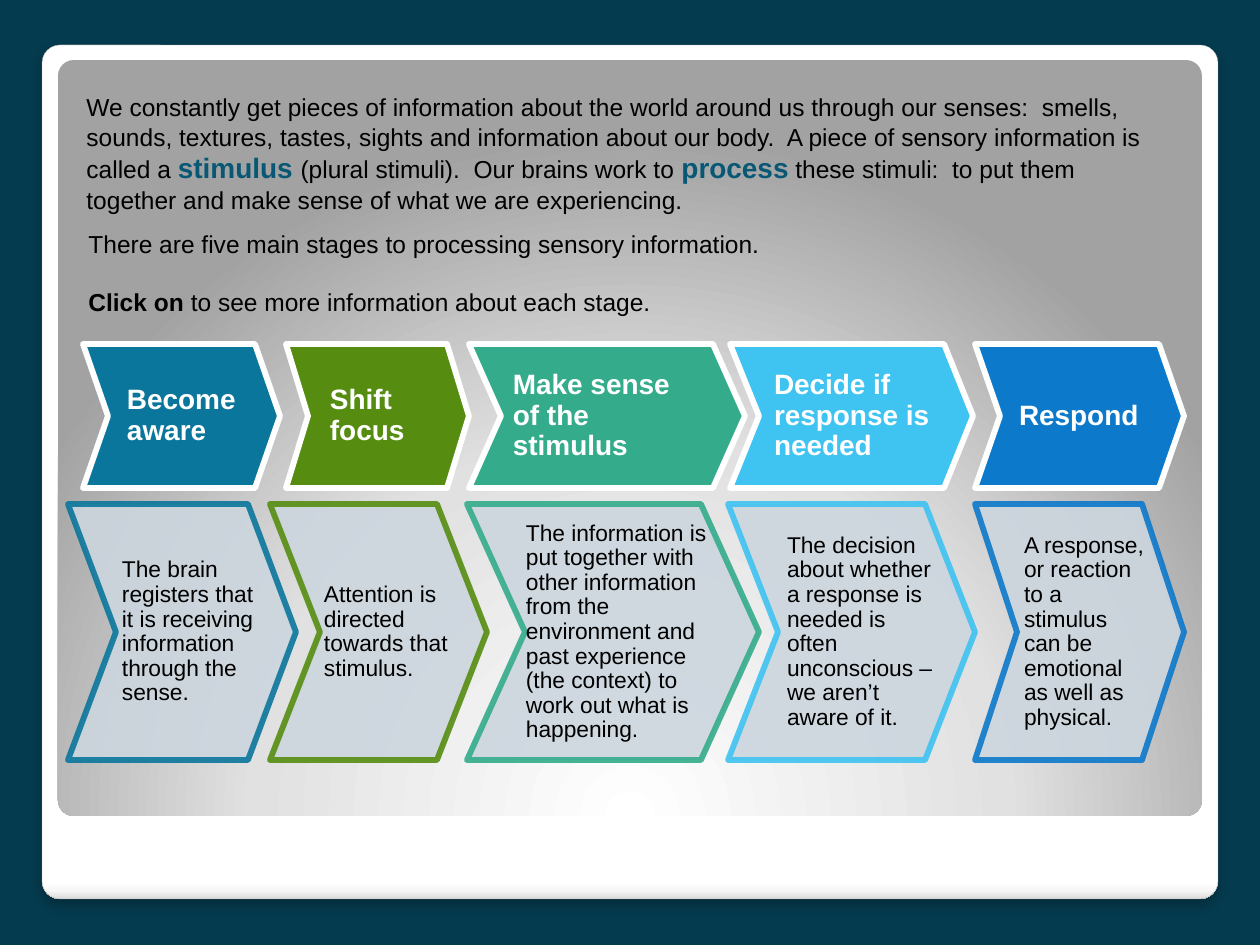
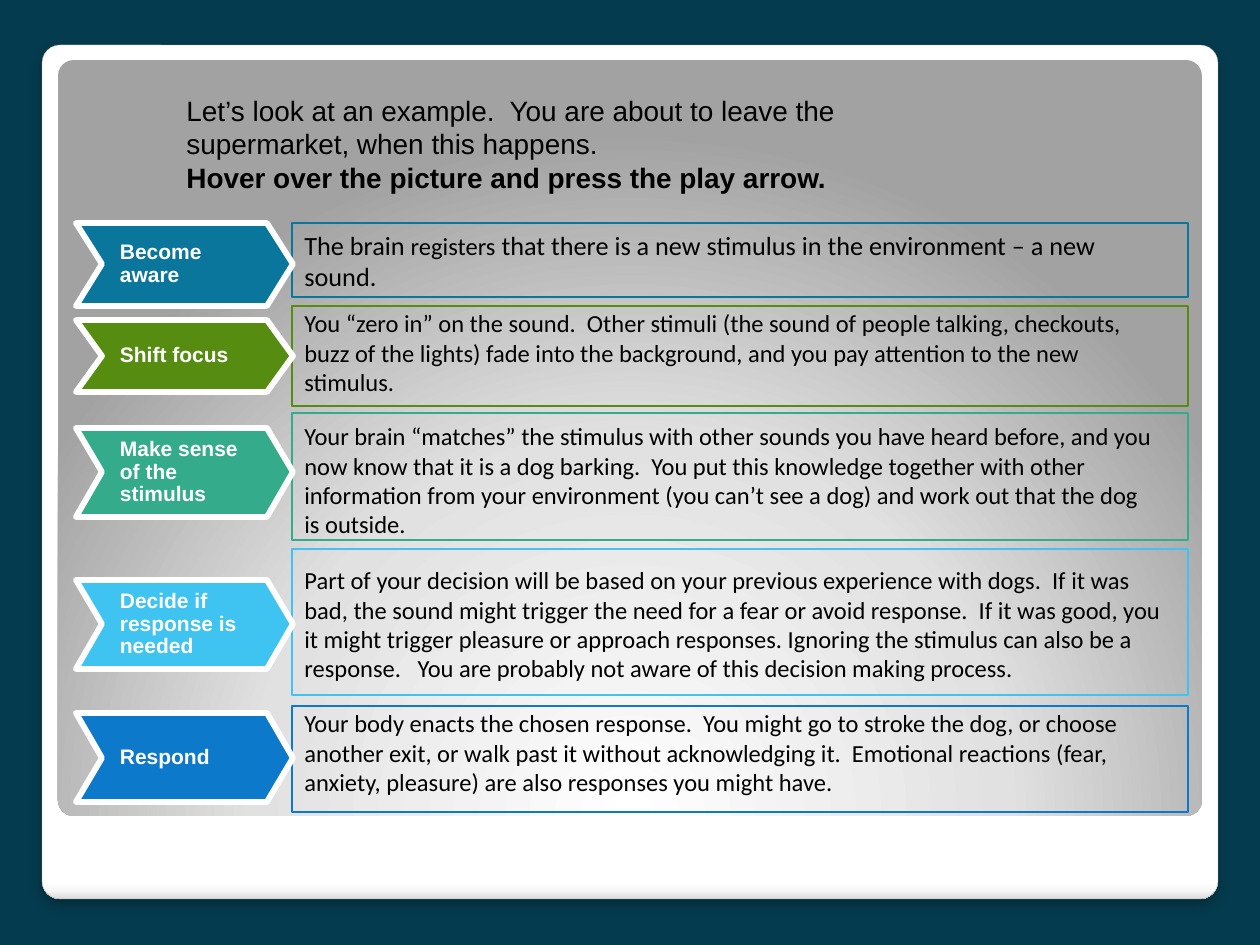
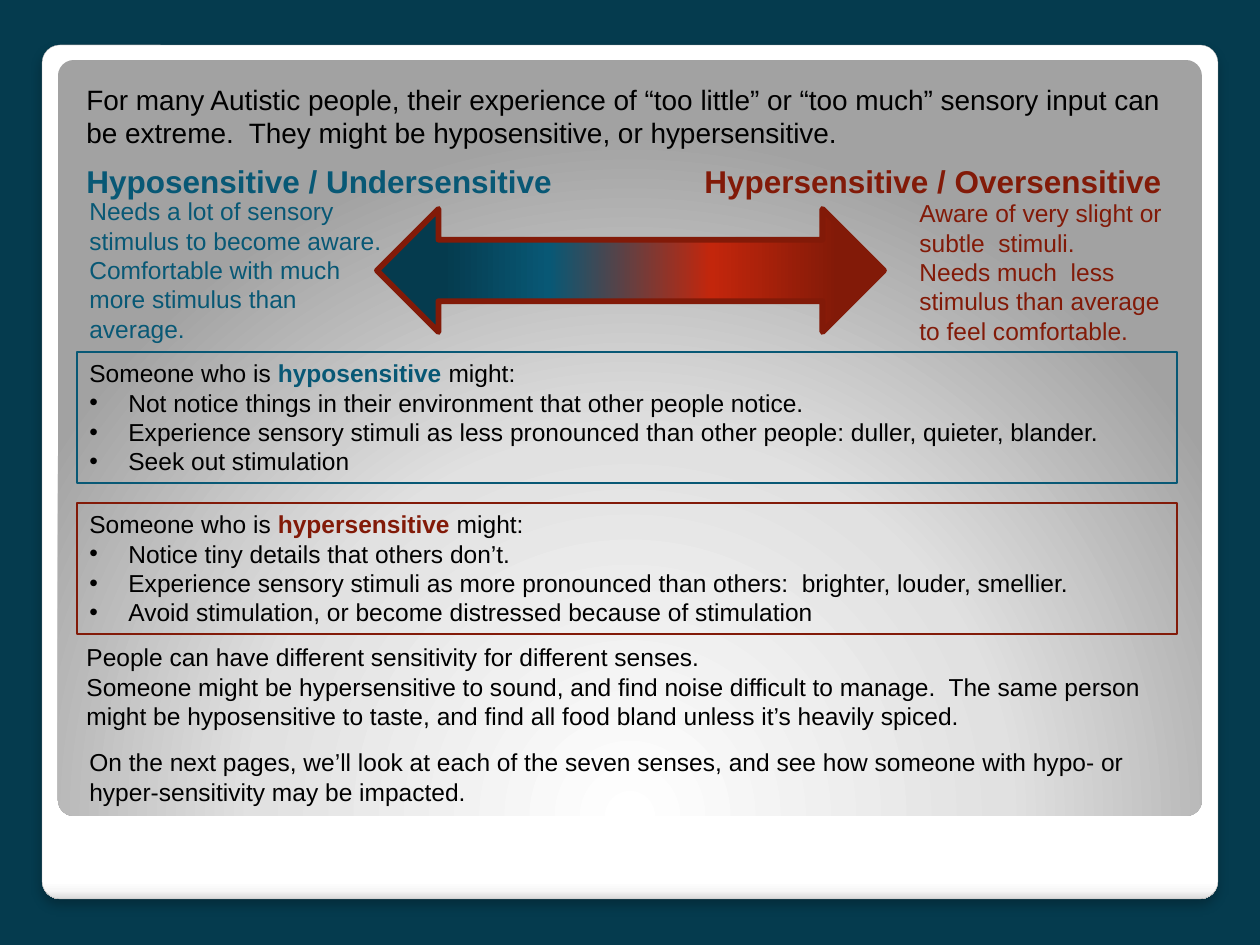
from pptx import Presentation
from pptx.dml.color import RGBColor
from pptx.enum.shapes import MSO_SHAPE as Preset
from pptx.enum.text import MSO_ANCHOR as Anchor, MSO_AUTO_SIZE as AutoSize, PP_ALIGN as Align
from pptx.oxml import parse_xml
from pptx.oxml.ns import nsdecls, qn
from pptx.util import Pt

EMU_PER_PX = 914400 / 126
SLIDE_SIZE = 1260, 945


class Theme:
    ink, white = "000000", "FFFFFF"
    backdrop, hypo, hyper = "053B4E", "085875", "821A08"
    stages = "0B769C", "568D11", "34AC8B", "3FC3F1", "0D79CA"
    detail_fill, frame_edge = "CCD6DE", "A4A4A4"
    frame = [(0, "FFFFFF"), (98, "FFFFFF"), (99, "F7F7F7"), (100, "DADADA")]
    panel = [(0, "FFFFFF"), (55, "E1E1E1"), (100, "A2A2A2")]
    scale = [(13, "053B4E"), (34, "085875"), (66, "C3260C"), (91, "821A08")]
    thick, medium, thin, hair = 3.35, 1.5, 0.75, 0.16
    corner = 0.021
    body = dict(name="Arial", size=14, bold=False, color=ink)
    lead = body | dict(size=16)
    story = body | dict(name="Calibri")
    detail = body | dict(size=13)
    stage = body | dict(size=16, bold=True, color=white)
    small_stage = stage | dict(size=12)
    bold = dict(bold=True)
    key_term = dict(size=16, bold=True, color=hypo)


# A paragraph is a list of runs; a run is plain text or (text, changed format).
SENSES_INTRO = [[
    "We constantly get pieces of information about the world around us through our senses:  "
    "smells, sounds, textures, tastes, sights and information about our body.  "
    "A piece of sensory information is called a ",
    ("stimulus ", Theme.key_term),
    "(plural stimuli).  Our brains work to ",
    ("process", Theme.key_term),
    " these stimuli:  to put them together and make sense of what we are experiencing.",
]]
STAGES_INTRO = [
    ["There are five main stages to processing sensory information."],
    [("Click on ", Theme.bold), "to see more information about each stage."],
]
STAGES = ["Become aware", "Shift focus", "Make sense of the stimulus",
          "Decide if response is needed", "Respond"]
DETAILS = [
    "The brain registers that it is receiving information through the sense.",
    "Attention is directed towards that stimulus.",
    "The information is put together with other information from the environment and "
    "past experience (the context) to work out what is happening.",
    "The decision about whether a response is needed is often unconscious – "
    "we aren’t aware of it.",
    "A response, or reaction to a stimulus can be emotional as well as physical.",
]
# left, width, notch
STAGE_SPANS = [(83, 197, 25), (286, 183, 22), (469, 276, 32), (730, 243, 29), (975, 209, 25)]
# left, width, notch, left inset, right inset
DETAIL_SPANS = [(68, 228, 48, 54, 35), (270, 217, 50, 54, 35), (467, 292, 58, 59, 39),
                (728, 247, 50, 59, 35), (975, 209, 42, 49, 35)]
STAGE_ROW, DETAIL_ROW = (344, 144), (504, 256)  # top, height
STAGE_INSETS = 44, 42

EXAMPLE_INTRO = [
    ["Let’s look at an example.  You are about to leave the supermarket, when this happens."],
    [("Hover over the picture and press the play arrow.", Theme.bold)],
]
LARGER = dict(size=15)
EXAMPLE = [
    [("The brain ", LARGER), "registers",
     (" that there is a new stimulus in the environment – a new sound.", LARGER)],
    ["You “zero in” on the sound.  Other stimuli (the sound of people talking, checkouts, "
     "buzz of the lights) fade into the background, and you pay attention to the new stimulus."],
    ["Your brain “matches” the stimulus with other sounds you have heard before, and you now "
     "know that it is a dog barking.  You put this knowledge together with other information "
     "from your environment (you can’t see a dog) and work out that the dog is outside."],
    ["Part of your decision will be based on your previous experience with dogs.  If it was bad, "
     "the sound might trigger the need for a fear or avoid response.  If it was good, you it "
     "might trigger pleasure or approach responses. Ignoring the stimulus can also be a "
     "response.   You are probably not aware of this decision making process."],
    ["Your body enacts the chosen response.  You might go to stroke the dog, or choose another "
     "exit, or walk past it without acknowledging it.  Emotional reactions (fear, anxiety, "
     "pleasure) are also responses you might have."],
]
# chevron top and height, outline top and height, text top, width and height
EXAMPLE_ROWS = [
    (223, 83, 223, 74, 223, 877, 77),
    (320, 72, 306, 100, 302, 877, 102),
    (428, 89, 413, 127, 415, 877, 131),
    (580, 89, 549, 146, 559, 888, 131),
    (713, 89, 706, 106, 702, 896, 102),
]
EXAMPLE_LEFT, EXAMPLE_WIDTH = 292, 896
SIDE_LEFT, SIDE_WIDTH, SIDE_NOTCH = 76, 217, 26

EXTREMES_INTRO = [[
    "For many Autistic people, their experience of “too little” or “too much” sensory input "
    "can be extreme.  They might be hyposensitive, or hypersensitive."]]
SENSITIVITIES = [
    dict(
        color=Theme.hypo, heading="Hyposensitive / Undersensitive", term="hyposensitive ",
        needs=["Needs a lot of sensory stimulus to become aware.",
               "Comfortable with much more stimulus than average."],
        signs=["Not notice things in their environment that other people notice.",
               "Experience sensory stimuli as less pronounced than other people: "
               "duller, quieter, blander.",
               "Seek out stimulation"],
        heading_at=(74, 156, 495, 50), needs_at=(77, 190, 325, 161), signs_at=(77, 352, 1100, 131)),
    dict(
        color=Theme.hyper, heading="Hypersensitive / Oversensitive", term="hypersensitive ",
        needs=["Aware of very slight or subtle  stimuli.",
               "Needs much  less stimulus than average to feel comfortable."],
        signs=["Notice tiny details that others don’t.",
               "Experience sensory stimuli as more pronounced than others:  "
               "brighter, louder, smellier.",
               "Avoid stimulation, or become distressed because of stimulation"],
        heading_at=(692, 156, 486, 50), needs_at=(907, 192, 268, 161), signs_at=(77, 503, 1100, 131)),
]
MIXED_SENSES = [
    ["People can have different sensitivity for different senses."],
    ["Someone might be hypersensitive to sound, and find noise difficult to manage.  The same "
     "person might be hyposensitive to taste, and find all food bland unless it’s heavily spiced."],
]
NEXT_PAGES = [[
    "On the next pages, we’ll look at each of the seven senses, and see how someone with "
    "hypo- or hyper-sensitivity may be impacted."]]


def px(length):
    return round(length * EMU_PER_PX)


def rgb(color):
    return RGBColor.from_string(color)


def paint(shape, fill=None, line=None, width=Theme.thin, opacity=None):
    """Set fill and line, or leave either out; opacity in percent covers both."""
    shape.shadow.inherit = False
    for part, color in ((shape.fill, fill), (shape.line.fill, line)):
        if color:
            part.solid()
            part.fore_color.rgb = rgb(color)
        else:
            part.background()
    if line:
        shape.line.width = Pt(width)
    if opacity:
        for color in shape.element.spPr.iter(qn("a:srgbClr")):
            color.append(parse_xml(f'<a:alpha {nsdecls("a")} val="{opacity * 1000}"/>'))


def paint_gradient(shape, stops, direction):
    """Replace the fill by a gradient; direction is its a:lin or a:path element."""
    shape.fill.gradient()
    blank = shape.element.spPr.find(qn("a:gradFill"))
    marks = "".join(f'<a:gs pos="{at * 1000}"><a:srgbClr val="{color}"/></a:gs>'
                    for at, color in stops)
    blank.getparent().replace(blank, parse_xml(
        f'<a:gradFill {nsdecls("a")} rotWithShape="1"><a:gsLst>{marks}</a:gsLst>'
        f'{direction}</a:gradFill>'))


def add_run(paragraph, run, base):
    words, changes = (run, {}) if isinstance(run, str) else run
    look = base | changes
    added = paragraph.add_run()
    added.text = words
    values = dict(name=look["name"], size=Pt(look["size"]), bold=look["bold"])
    for key, value in values.items():
        setattr(added.font, key, value)
    added.font.color.rgb = rgb(look["color"])


def write(shape, paragraphs, base, **frame_format):
    """Fill the text frame and return its paragraphs."""
    frame = shape.text_frame
    for key, value in (dict(word_wrap=True, vertical_anchor=Anchor.TOP) | frame_format).items():
        setattr(frame, key, value)
    for index, runs in enumerate(paragraphs):
        paragraph = frame.add_paragraph() if index else frame.paragraphs[0]
        paragraph.alignment = Align.LEFT
        for run in runs:
            add_run(paragraph, run, base)
    return frame.paragraphs


def add_text(slide, place, paragraphs, base=Theme.body, wrap=True):
    box = slide.shapes.add_textbox(*map(px, place))
    return write(box, paragraphs, base, word_wrap=wrap, auto_size=AutoSize.SHAPE_TO_FIT_TEXT)


def add_preset(slide, preset, place, **look):
    shape = slide.shapes.add_shape(preset, *map(px, place))
    paint(shape, **look)
    return shape


def add_chevron(slide, place, notch, label, base, insets=STAGE_INSETS, **look):
    left, top, width, height = place
    right, middle, bottom = left + width, top + height / 2, top + height
    outline = slide.shapes.build_freeform(left, top, scale=EMU_PER_PX)
    outline.add_line_segments([(right - notch, top), (right, middle), (right - notch, bottom),
                               (left, bottom), (left + notch, middle)], close=True)
    chevron = outline.convert_to_shape()
    paint(chevron, width=Theme.thick, **look)
    margins = dict(zip(("margin_left", "margin_right"), map(px, insets)),
                   margin_top=px(1), margin_bottom=px(1))
    paragraph, = write(chevron, [[label]], base, vertical_anchor=Anchor.MIDDLE, **margins)
    paragraph.line_spacing = 0.9


def add_bullet(paragraph, indent=39):
    properties = paragraph._p.get_or_add_pPr()
    properties.set("marL", str(px(indent)))
    properties.set("indent", str(-px(indent)))
    for tag in ('buFont typeface="Arial"', 'buChar char="•"'):
        name, value = tag.split(" ")
        properties.append(parse_xml(f'<a:{name} {nsdecls("a")} {value}/>'))


def dress_layout(layout, slide):
    """Put the backdrop, frame and panel on the layout that all slides use."""
    for placeholder in list(layout.placeholders):
        placeholder.element.getparent().remove(placeholder.element)
    backdrop = layout.background.fill
    backdrop.solid()
    backdrop.fore_color.rgb = rgb(Theme.backdrop)

    frame = add_preset(slide, Preset.ROUNDED_RECTANGLE, (42, 45, 1176, 854),
                       line=Theme.frame_edge, width=Theme.hair)
    paint_gradient(frame, Theme.frame, '<a:lin ang="5400000" scaled="0"/>')
    frame.element.spPr.find(qn("a:effectLst")).append(parse_xml(
        f'<a:outerShdw {nsdecls("a")} blurRad="{Pt(6)}" dist="{Pt(4)}" dir="5400000">'
        '<a:srgbClr val="000000"><a:alpha val="25000"/></a:srgbClr></a:outerShdw>'))
    panel = add_preset(slide, Preset.ROUNDED_RECTANGLE, (58, 60, 1144, 756))
    paint_gradient(panel, Theme.panel, '<a:path path="circle"><a:fillToRect l="50000" '
                                       't="175000" r="50000" b="-75000"/></a:path>')
    for shape in (frame, panel):
        shape.adjustments[0] = Theme.corner
        layout.shapes.element.append(shape.element)


def build_stages(slide):
    add_text(slide, (74, 86, 1101, 136), SENSES_INTRO)
    _, click_on = add_text(slide, (76, 223, 1092, 102), STAGES_INTRO)
    click_on.space_before = Pt(16)
    columns = zip(STAGES, DETAILS, Theme.stages, STAGE_SPANS, DETAIL_SPANS)
    for stage, detail, color, (left, width, notch), detail_span in columns:
        top, height = STAGE_ROW
        add_chevron(slide, (left, top, width, height), notch, stage, Theme.stage,
                    fill=color, line=Theme.white)
        left, width, notch, *insets = detail_span
        top, height = DETAIL_ROW
        add_chevron(slide, (left, top, width, height), notch, detail, Theme.detail, insets,
                    fill=Theme.detail_fill, line=color, opacity=90)


def build_example(slide):
    add_text(slide, (174, 87, 714, 115), EXAMPLE_INTRO, Theme.lead)
    for stage, story, color, row in zip(STAGES, EXAMPLE, Theme.stages, EXAMPLE_ROWS):
        top, height, box_top, box_height, text_top, text_width, text_height = row
        add_text(slide, (EXAMPLE_LEFT, text_top, text_width, text_height), [story], Theme.story)
        add_preset(slide, Preset.RECTANGLE, (EXAMPLE_LEFT, box_top, EXAMPLE_WIDTH, box_height),
                   line=color, width=Theme.medium)
        add_chevron(slide, (SIDE_LEFT, top, SIDE_WIDTH, height), SIDE_NOTCH, stage,
                    Theme.small_stage, fill=color, line=Theme.white)


def build_extremes(slide):
    add_text(slide, (74, 76, 1101, 81), EXTREMES_INTRO, Theme.lead)
    arrow = add_preset(slide, Preset.LEFT_RIGHT_ARROW, (377, 209, 507, 123),
                       line=Theme.hyper, width=Theme.thick)
    paint_gradient(arrow, Theme.scale, '<a:lin ang="0" scaled="0"/>')
    for side in SENSITIVITIES:
        tinted = Theme.body | dict(color=side["color"])
        add_text(slide, side["heading_at"], [[side["heading"]]],
                 tinted | dict(size=18, bold=True), wrap=False)
        add_text(slide, side["needs_at"], [[need] for need in side["needs"]], tinted)
        box = add_preset(slide, Preset.RECTANGLE, side["signs_at"], line=side["color"])
        term = side["term"], dict(bold=True, color=side["color"])
        opening = ["Someone who is ", term, "might:"]
        _, *signs = write(box, [opening] + [[sign] for sign in side["signs"]], Theme.body)
        for sign in signs:
            add_bullet(sign)
    add_text(slide, (74, 636, 1100, 102), MIXED_SENSES)
    add_text(slide, (77, 741, 1081, 72), NEXT_PAGES)


def main():
    deck = Presentation()
    deck.slide_width, deck.slide_height = map(px, SLIDE_SIZE)
    blank = deck.slide_layouts[6]
    builders = build_stages, build_example, build_extremes
    slides = [deck.slides.add_slide(blank) for _ in builders]
    dress_layout(blank, slides[0])
    for build, slide in zip(builders, slides):
        build(slide)
    deck.save("out.pptx")


if __name__ == "__main__":
    main()
